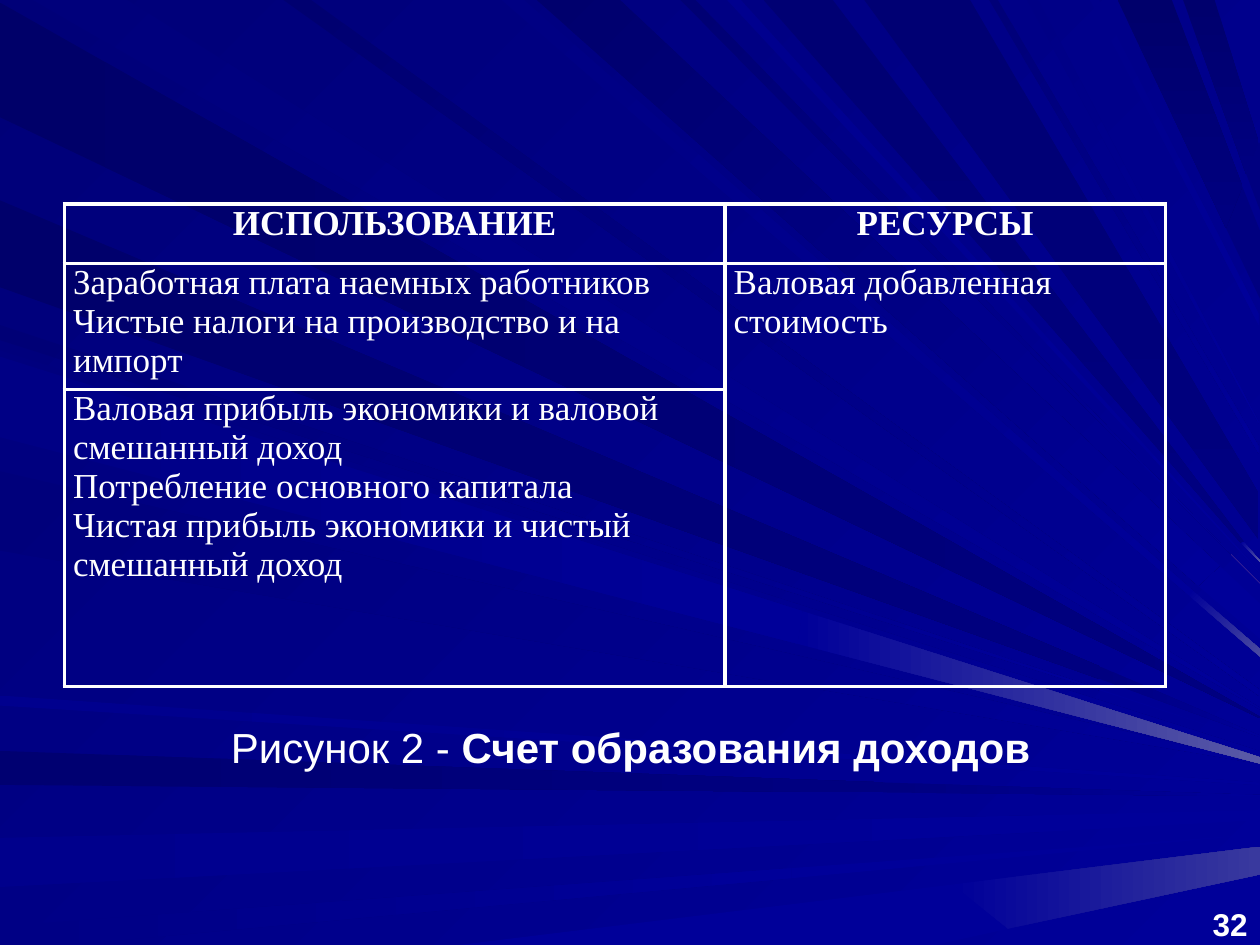
from lxml import etree
from pptx import Presentation
from pptx import util as u
from pptx.dml.color import RGBColor
from pptx.enum import text as t
from pptx.oxml.ns import qn

UNIT = 9144
WIDTH, HEIGHT = 1000, 750
WHITE = "FFFFFF"
BODY_FONT = "Times New Roman"

RAYS = [
    ("556,317 0,2 0,93 529,345 1000,570 1000,569", "000069", "000080", 0),
    ("577,298 101,0 26,0 563,310 1000,563 1000,562", "00007B", "000099", 45),
    ("0,623 701,629 701,621 0,596", "000071", "000080", 0),
    ("1000,632 1000,631 701,621 701,629", "000080", "000099", 0),
    ("0,704 831,660 831,647 0,665", "00008C", "000099", 0),
    ("1000,651 1000,643 831,647 831,660", "000099", None, 0),
    ("1000,662 628,689 628,697", "000099", None, 0),
    ("0,750 54,750 628,697 628,689 0,735", "000085", "000099", 0),
    ("742,750 801,737 756,702 364,750", "000099", None, 0),
    ("1000,694 1000,672 756,702 800,737", "000099", "39399E", 0),
    ("1000,589 873,547 873,548", "000099", None, 0),
    ("0,270 873,548 873,547 0,258", "000076", "000099", 45),
    ("1000,585 1000,584 873,529 873,539", "000080", "000099", 0),
    ("0,228 873,539 873,529 0,159", "00006B", "000080", 0),
    ("398,0 944,473 947,469 416,0", "000083", "000099", 45),
    ("1000,521 1000,515 947,469 944,473", "000099", "4A4AA1", 45),
    ("1000,507 1000,479 968,449 951,465", "000099", None, 0),
    ("426,0 951,465 968,449 492,0", "00006D", "000099", 45),
    ("1000,463 977,440 977,440", "FF9999", None, 0),
    ("540,0 977,440 977,440 552,0", "000073", "000099", 45),
    ("606,0 985,431 987,430 661,0", "000073", "000080", 90),
    ("1000,446 1000,445 987,430 985,431", "000099", "5A5AA6", 45),
    ("1000,237 1000,183 986,148 973,181", "000080", None, 0),
    ("887,0 973,181 986,148 930,0", "00006B", "000080", 90),
    ("964,0 939,0 989,138 999,113", "00006D", "000080", 90),
    ("989,138 1000,167 1000,114 999,113", "000080", None, 0),
    ("0,342 999,602 999,596 0,278", "00007E", "000099", 45),
    ("0,437 999,606 999,605 0,374", "00007B", "000099", 45),
    ("0,560 999,623 999,621 0,552", "00008E", "000099", 0),
    ("225,0 999,552 999,547 247,0", "000070", "000099", 45),
    ("577,0 999,454 999,453 588,0", "00008E", "000099", 45),
    ("770,0 686,0 999,428 999,390 998,390", "000073", "000080", 90),
    ("785,0 999,360 999,354 792,0", "000078", "000099", 45),
    ("815,0 999,336 999,335 824,0", "000085", "000099", 45),
    ("999,249 872,0 865,0 999,258", "00008A", "000099", 45),
    ("0,283 0,347 633,511 635,498 637,485", "000085", "000099", 0),
    ("1000,601 637,485 635,498 633,511 1000,606", "000099", "5A5AA6", 0),
]

USES = [
    "Заработная плата наемных работников\nЧистые налоги на производство и на импорт",
    "Валовая прибыль экономики и валовой смешанный доход\n"
    "Потребление основного капитала\n"
    "Чистая прибыль экономики и чистый смешанный доход",
]


def color(value):
    """Turn a hex string into a colour."""
    return RGBColor.from_string(value)


def emu(box):
    """Convert a box in hundredths of an inch to slide lengths."""
    return [u.Emu(value * UNIT) for value in box]


def paint(fill, start, end, angle):
    """Fill with one colour, or with a gradient at a clockwise angle."""
    if end is None:
        fill.solid()
        fill.fore_color.rgb = color(start)
        return
    fill.gradient()
    fill.gradient_angle = (360 - angle) % 360
    for stop, value in zip(fill.gradient_stops, (start, end)):
        stop.color.rgb = color(value)


def write(paragraph, text, size=20, font=BODY_FONT, bold=False, align=t.PP_ALIGN.LEFT):
    """Append formatted text to a paragraph, with a line break at each newline."""
    paragraph.alignment = align
    for index, line in enumerate(text.split("\n")):
        if index:
            paragraph.add_line_break()
        run = paragraph.add_run()
        run.text = line
        run.font.size = u.Pt(size)
        run.font.name = font
        run.font.bold = bold
        run.font.color.rgb = color(WHITE)


def add_background(slide):
    """Draw the blue backdrop and its light rays."""
    paint(slide.background.fill, "000078", "000099", 45)
    for outline, start, end, angle in RAYS:
        points = [tuple(map(int, pair.split(","))) for pair in outline.split()]
        builder = slide.shapes.build_freeform(*points[0], scale=UNIT)
        builder.add_line_segments(points[1:], close=True)
        shape = builder.convert_to_shape()
        shape.shadow.inherit = False
        shape.line.fill.background()
        paint(shape.fill, start, end, angle)


def add_text_box(slide, box, anchor=t.MSO_ANCHOR.TOP):
    """Add a wrapping text box and return its first paragraph."""
    frame = slide.shapes.add_textbox(*emu(box)).text_frame
    frame.word_wrap = True
    frame.vertical_anchor = anchor
    return frame.paragraphs[0]


def add_borders(cell):
    """Give a cell white lines on all four sides and no fill."""
    properties = cell._tc.get_or_add_tcPr()
    for side in ("a:lnL", "a:lnR", "a:lnT", "a:lnB"):
        line = etree.SubElement(properties, qn(side), w=str(u.Pt(2.25)))
        solid = etree.SubElement(line, qn("a:solidFill"))
        etree.SubElement(solid, qn("a:srgbClr"), val=WHITE)
    cell.fill.background()


def add_account_table(slide, box):
    """Build the account of uses and resources."""
    table = slide.shapes.add_table(3, 2, *emu(box)).table
    table.first_row = table.horz_banding = False
    for column, share in zip(table.columns, (0.6, 0.4)):
        column.width = u.Emu(int(box[2] * share * UNIT))
    for row, height in zip(table.rows, (47, 100, 236)):
        row.height = u.Emu(height * UNIT)
    for cell in table.iter_cells():
        cell.margin_left = cell.margin_right = u.Inches(0.07)
        cell.margin_top = cell.margin_bottom = 0
        add_borders(cell)
    table.cell(1, 1).merge(table.cell(2, 1))
    for column, heading in enumerate(("ИСПОЛЬЗОВАНИЕ", "РЕСУРСЫ")):
        write(table.cell(0, column).text_frame.paragraphs[0], heading,
              bold=True, align=t.PP_ALIGN.CENTER)
    for row, use in enumerate(USES, 1):
        write(table.cell(row, 0).text_frame.paragraphs[0], use)
    write(table.cell(1, 1).text_frame.paragraphs[0], "Валовая добавленная стоимость")


def add_caption(slide, box):
    """Write the figure caption."""
    paragraph = add_text_box(slide, box)
    paragraph.line_spacing = 1.5
    for text, bold in (("Рисунок 2 ‑ ", False), ("Счет образования доходов", True)):
        write(paragraph, text, size=24, font="Arial", bold=bold, align=t.PP_ALIGN.CENTER)


def add_page_number(slide, box):
    """Write the page number in the corner."""
    paragraph = add_text_box(slide, box, t.MSO_ANCHOR.BOTTOM)
    write(paragraph, "32", size=18, font="Arial", bold=True, align=t.PP_ALIGN.RIGHT)


def main():
    """Build and save the slide."""
    presentation = Presentation()
    presentation.slide_width, presentation.slide_height = emu((WIDTH, HEIGHT))
    slide = presentation.slides.add_slide(presentation.slide_layouts[6])
    add_background(slide)
    add_page_number(slide, (949, 714, 51, 39))
    add_caption(slide, (20, 548, 961, 63))
    add_account_table(slide, (51, 162, 874, 383))
    presentation.save("out.pptx")


if __name__ == "__main__":
    main()
